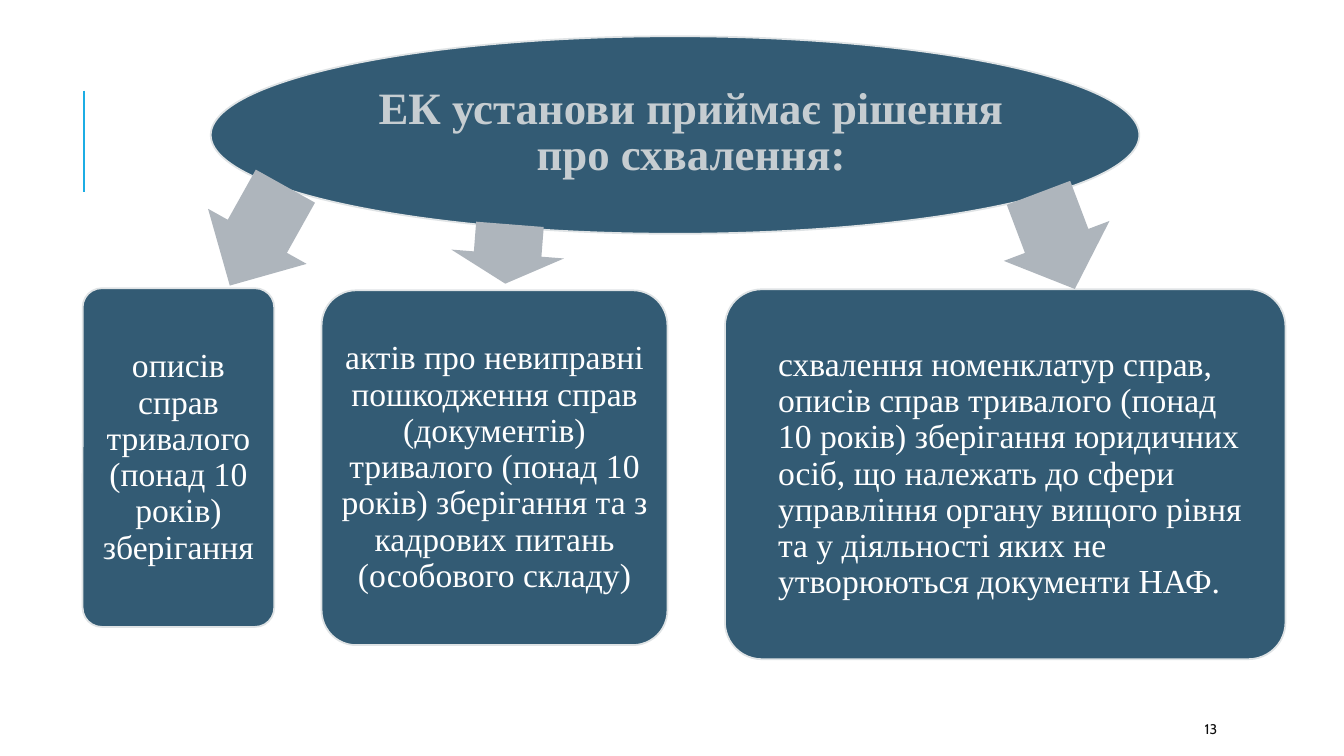
from dataclasses import dataclass

import lxml.etree
import pptx
import pptx.dml.color
import pptx.enum.shapes
import pptx.enum.text
import pptx.oxml.ns
import pptx.util
from pptx.util import Inches

Align = pptx.enum.text.PP_ALIGN
Anchor = pptx.enum.text.MSO_ANCHOR
Preset = pptx.enum.shapes.MSO_SHAPE


@dataclass(frozen=True)
class Theme:
    panel: str = "335B74"
    outline: str = "DFE3E5"
    arrow: str = "AEB5BC"
    accent: str = "1CADE4"
    heading: str = "C6CDD1"
    body: str = "FFFFFF"
    number: str = "0D0D0D"
    serif: str = "Times New Roman"
    sans: str = "Cabin"
    heading_size: int = 32
    body_size: int = 24
    number_size: int = 10


@dataclass(frozen=True)
class Area:
    left: float
    top: float
    width: float
    height: float

    def lengths(self):
        return tuple(Inches(n) for n in (self.left, self.top, self.width, self.height))


@dataclass(frozen=True)
class Card:
    area: Area
    text: str
    alignment: Align = Align.CENTER
    left_inset: float = 0.05
    right_inset: float = 0.05


@dataclass(frozen=True)
class Arrow:
    area: Area
    rotation: float


THEME = Theme()
HEADING = ["ЕК установи приймає рішення", "про схвалення:"]
CARDS = [
    Card(Area(0.82, 2.86, 1.9, 3.36), "описів справ тривалого (понад 10 років) зберігання"),
    Card(
        Area(3.19, 2.88, 3.43, 3.52),
        "актів про невиправні пошкодження справ (документів) тривалого (понад 10 років) "
        "зберігання та з кадрових питань (особового складу)",
    ),
    Card(
        Area(7.19, 2.87, 5.56, 3.67),
        "схвалення номенклатур справ, описів справ тривалого (понад 10 років) зберігання "
        "юридичних осіб, що належать до сфери управління органу вищого рівня та у діяльності "
        "яких не утворюються документи НАФ.",
        Align.LEFT, 0.42, 0.32,
    ),
]
ARROWS = [
    Arrow(Area(1.99, 1.78, 1.13, 1.12), 299.2),
    Arrow(Area(4.74, 1.96, 0.59, 1.12), 274.5),
    Arrow(Area(9.97, 1.83, 1.02, 1.12), 249.3),
]


def color(value: str) -> pptx.dml.color.RGBColor:
    return pptx.dml.color.RGBColor.from_string(value)


def add_preset(slide, preset: Preset, area: Area, fill: str, outline: str | None = None):
    shape = slide.shapes.add_shape(preset, *area.lengths())
    shape.shadow.inherit = False
    shape.fill.solid()
    shape.fill.fore_color.rgb = color(fill)
    if outline:
        shape.line.color.rgb = color(outline)
        shape.line.width = pptx.util.Pt(1.25)
    else:
        shape.line.fill.background()
    return shape


def write(frame, lines: list[str], size: int, font: str, text_color: str,
          alignment: Align, spacing: float = 1.0, bold: bool = False) -> None:
    frame.word_wrap = True
    frame.auto_size = pptx.enum.text.MSO_AUTO_SIZE.NONE
    frame.vertical_anchor = Anchor.MIDDLE
    for index, line in enumerate(lines):
        paragraph = frame.add_paragraph() if index else frame.paragraphs[0]
        paragraph.alignment = alignment
        paragraph.line_spacing = spacing
        paragraph.space_before = pptx.util.Pt(0)
        run = paragraph.add_run()
        run.text = line
        run.font.size = pptx.util.Pt(size)
        run.font.name = font
        run.font.bold = bold
        run.font.color.rgb = color(text_color)


def add_card(slide, card: Card) -> None:
    shape = add_preset(slide, Preset.ROUNDED_RECTANGLE, card.area, THEME.panel, THEME.outline)
    shape.adjustments[0] = 0.1
    frame = shape.text_frame
    frame.margin_left = Inches(card.left_inset)
    frame.margin_right = Inches(card.right_inset)
    frame.margin_top = frame.margin_bottom = Inches(0.05)
    write(frame, [card.text], THEME.body_size, THEME.serif, THEME.body, card.alignment, 0.9)


def add_arrow(slide, arrow: Arrow) -> None:
    shape = add_preset(slide, Preset.LEFT_ARROW, arrow.area, THEME.arrow)
    shape.adjustments[0] = 0.6
    shape.adjustments[1] = 0.5
    shape.rotation = arrow.rotation


def add_accent_line(slide) -> None:
    line = slide.shapes.add_connector(
        pptx.enum.shapes.MSO_CONNECTOR.STRAIGHT,
        Inches(0.83), Inches(0.9), Inches(0.83), Inches(1.9),
    )
    line.line.color.rgb = color(THEME.accent)
    line.line.width = pptx.util.Pt(1.5)
    properties = line.element.find(pptx.oxml.ns.qn("p:spPr"))
    lxml.etree.SubElement(properties, pptx.oxml.ns.qn("a:effectLst"))


def place_title(slide) -> None:
    title = slide.shapes.title
    title.left, title.top, title.width, title.height = Area(2.25, 0.78, 9.21, 1.1).lengths()
    write(title.text_frame, HEADING, THEME.heading_size, THEME.serif, THEME.heading,
          Align.CENTER, 0.85, True)
    title.element.getparent().append(title.element)


def add_slide_number(slide) -> None:
    box = slide.shapes.add_textbox(*Area(11.85, 7.08, 1.06, 0.3).lengths())
    write(box.text_frame, ["13"], THEME.number_size, THEME.sans, THEME.number, Align.LEFT)


def main() -> None:
    presentation = pptx.Presentation()
    presentation.slide_width = Inches(13.33)
    presentation.slide_height = Inches(7.5)
    slide = presentation.slides.add_slide(presentation.slide_layouts.get_by_name("Title Only"))
    add_accent_line(slide)
    add_preset(slide, Preset.OVAL, Area(2.09, 0.36, 9.21, 1.96), THEME.panel, THEME.outline)
    for card in CARDS:
        add_card(slide, card)
    for arrow in ARROWS:
        add_arrow(slide, arrow)
    place_title(slide)
    add_slide_number(slide)
    presentation.save("out.pptx")


if __name__ == "__main__":
    main()
